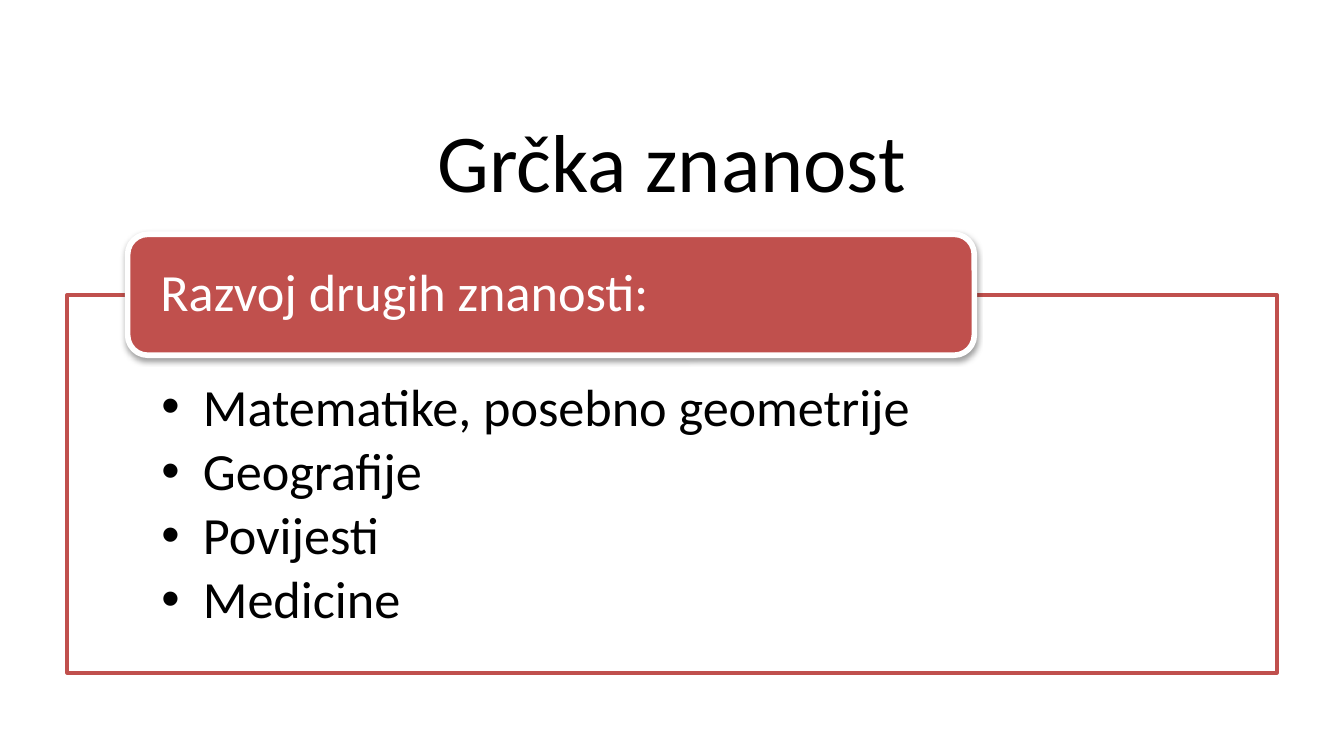
from dataclasses import dataclass

import pptx
import pptx.dml.color
import pptx.enum.shapes
import pptx.enum.text
import pptx.oxml
import pptx.oxml.ns
import pptx.util

WIDE = 10
HIGH = WIDE * 9 / 16
FONT = "Calibri"
RED, WHITE, BLACK = "C0504D", "FFFFFF", "000000"
NS = pptx.oxml.ns.nsdecls("a")
MIDDLE = pptx.enum.text.MSO_ANCHOR.MIDDLE
TOP = pptx.enum.text.MSO_ANCHOR.TOP


@dataclass
class Box:
    """Place of a part, in shares of the slide's width and height."""
    left: float
    top: float
    width: float
    height: float


@dataclass
class Style:
    size: int
    color: str
    after: float = 0


HEAD = Box(0.05, 0.15, 0.9, 0.14)
FRAME = Box(0.05, 0.39, 0.9, 0.5)
LABEL = Box(0.095, 0.31, 0.63, 0.16)
TOPICS = ["Matematike, posebno geometrije", "Geografije", "Povijesti", "Medicine"]


def tint(code: str) -> pptx.dml.color.RGBColor:
    return pptx.dml.color.RGBColor.from_string(code)


def place(shape, box: Box) -> None:
    shape.left = pptx.util.Inches(box.left * WIDE)
    shape.top = pptx.util.Inches(box.top * HIGH)
    shape.width = pptx.util.Inches(box.width * WIDE)
    shape.height = pptx.util.Inches(box.height * HIGH)


def paint(shape, fill: str, line: str, width: float) -> None:
    shape.fill.solid()
    shape.fill.fore_color.rgb = tint(fill)
    shape.line.color.rgb = tint(line)
    shape.line.width = pptx.util.Pt(width)


def setup(shape, anchor, side: float, top: float, base: float) -> None:
    frame = shape.text_frame
    frame.word_wrap = True
    frame.auto_size = pptx.enum.text.MSO_AUTO_SIZE.NONE
    frame.vertical_anchor = anchor
    frame.margin_left = frame.margin_right = pptx.util.Inches(side)
    frame.margin_top = pptx.util.Inches(top)
    frame.margin_bottom = pptx.util.Inches(base)


def write(para, text: str, style: Style, align) -> None:
    para.alignment = align
    para.line_spacing = 0.9
    para.space_before = pptx.util.Pt(0)
    para.space_after = pptx.util.Pt(style.after)
    run = para.add_run()
    run.text = text
    run.font.name = FONT
    run.font.size = pptx.util.Pt(style.size)
    run.font.color.rgb = tint(style.color)


def bullet(para, indent: float) -> None:
    para.level = 1
    props = para._p.get_or_add_pPr()
    step = pptx.util.Inches(indent)
    props.set("marL", str(step))
    props.set("indent", str(-step))
    props.append(pptx.oxml.parse_xml(f'<a:buFont {NS} typeface="Arial"/>'))
    props.append(pptx.oxml.parse_xml(f'<a:buChar {NS} char="•"/>'))


def shade(shape) -> None:
    blur, drop = pptx.util.Pt(3.1), pptx.util.Pt(1.6)
    shape._element.spPr.append(pptx.oxml.parse_xml(
        f'<a:effectLst {NS}><a:outerShdw blurRad="{blur}" dist="{drop}" '
        f'dir="5400000" rotWithShape="0"><a:srgbClr val="{BLACK}">'
        '<a:alpha val="38000"/></a:srgbClr></a:outerShdw></a:effectLst>'))


def main() -> None:
    deck = pptx.Presentation()
    deck.slide_width = pptx.util.Inches(WIDE)
    deck.slide_height = pptx.util.Inches(HIGH)
    slide = deck.slides.add_slide(deck.slide_layouts[1])
    align = pptx.enum.text.PP_ALIGN

    # Title
    title = slide.shapes.title
    place(title, HEAD)
    setup(title, MIDDLE, 0.1, 0.05, 0.05)
    write(title.text_frame.paragraphs[0], "Grčka znanost",
          Style(44, BLACK), align.CENTER)

    # Framed list
    body = slide.placeholders[1]
    place(body, FRAME)
    paint(body, WHITE, RED, 2)
    setup(body, TOP, 0.7, 0.64, 0.22)
    for row, topic in enumerate(TOPICS):
        frame = body.text_frame
        para = frame.add_paragraph() if row else frame.paragraphs[0]
        bullet(para, 0.31)
        write(para, topic, Style(28, BLACK, 4.2), align.LEFT)

    # Heading on the frame's top edge
    label = slide.shapes.add_shape(
        pptx.enum.shapes.MSO_SHAPE.ROUNDED_RECTANGLE, 0, 0, 0, 0)
    place(label, LABEL)
    paint(label, RED, WHITE, 3)
    shade(label)
    setup(label, MIDDLE, 0.2, 0, 0)
    write(label.text_frame.paragraphs[0], "Razvoj drugih znanosti:",
          Style(28, WHITE), align.LEFT)

    deck.save("out.pptx")


if __name__ == "__main__":
    main()
